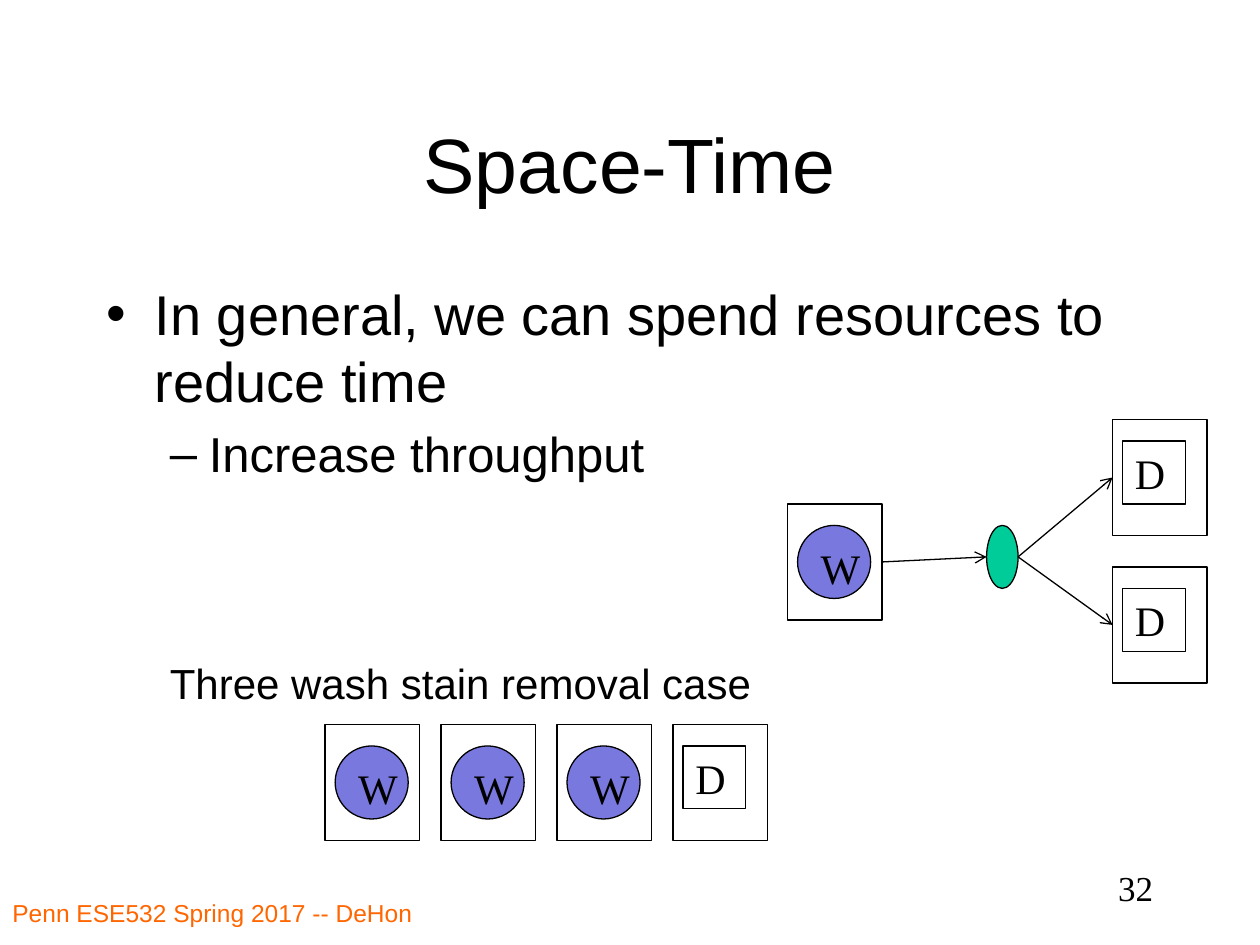
from lxml.etree import SubElement
from pptx import Presentation
from pptx.dml.color import RGBColor
from pptx.enum.shapes import MSO_CONNECTOR as Connector, MSO_SHAPE as Shape
from pptx.enum.text import MSO_ANCHOR as Anchor, PP_ALIGN as Align
from pptx.oxml.ns import qn
from pptx.util import Inches, Pt

BLACK = RGBColor(0x00, 0x00, 0x00)
WHITE = RGBColor(0xFF, 0xFF, 0xFF)
ORANGE = RGBColor(0xFF, 0x66, 0x00)
VIOLET = RGBColor(0x78, 0x78, 0xDE)
GREEN = RGBColor(0x00, 0xCC, 0x99)
SANS = "Arial"
SERIF = "Times New Roman"


def format_paragraph(paragraph, size, font=SANS, color=BLACK, align=Align.LEFT):
    """Set the alignment and the font of every run."""
    paragraph.alignment = align
    for run in paragraph.runs:
        run.font.size = Pt(size)
        run.font.name = font
        run.font.color.rgb = color


def add_title(slide, text):
    """Place and format the title placeholder."""
    title = slide.shapes.title
    title.left, title.top = Inches(0.75), Inches(0.67)
    title.width, title.height = Inches(8.5), Inches(1.25)
    title.text_frame.text = text
    title.text_frame.vertical_anchor = Anchor.MIDDLE
    format_paragraph(title.text_frame.paragraphs[0], 44, align=Align.CENTER)


def add_label(shapes, box, text, size, wrap=True, **style):
    """Add a one-paragraph text box."""
    label = shapes.add_textbox(*map(Inches, box))
    label.text_frame.word_wrap = wrap
    label.text_frame.text = text
    format_paragraph(label.text_frame.paragraphs[0], size, **style)


def add_bullets(slide, box, items):
    """Add a text box of bulleted (text, level, size, mark, margin, indent) items."""
    frame = slide.shapes.add_textbox(*map(Inches, box)).text_frame
    frame.word_wrap = True
    for index, (text, level, size, mark, margin, indent) in enumerate(items):
        paragraph = frame.add_paragraph() if index else frame.paragraphs[0]
        paragraph.text = text
        paragraph.level = level
        if index:
            paragraph.space_before = Pt(size * 0.2)
        properties = paragraph._p.get_or_add_pPr()
        properties.set("marL", str(Inches(margin)))
        properties.set("indent", str(Inches(indent)))
        SubElement(properties, qn("a:buFont")).set("typeface", SANS)
        SubElement(properties, qn("a:buChar")).set("char", mark)
        format_paragraph(paragraph, size)


def add_outlined(shapes, kind, box, fill=WHITE, text=""):
    """Add a black-outlined shape, with a letter where given."""
    shape = shapes.add_shape(kind, *map(Inches, box))
    shape.shadow.inherit = False
    shape.fill.solid()
    shape.fill.fore_color.rgb = fill
    shape.line.color.rgb = BLACK
    shape.line.width = Pt(0.75)
    if text:
        shape.text_frame.text = text
        shape.text_frame.vertical_anchor = Anchor.TOP
        format_paragraph(shape.text_frame.paragraphs[0], 24, font=SERIF)


def add_machine(shapes, letter, left, top):
    """Add a washer (W) or a dryer (D) in its cabinet."""
    add_outlined(shapes, Shape.RECTANGLE, (left, top, 0.75, 0.92))
    kind, size, fill = {
        "W": (Shape.OVAL, 0.58, VIOLET),
        "D": (Shape.RECTANGLE, 0.5, WHITE),
    }[letter]
    add_outlined(shapes, kind, (left + 0.08, top + 0.17, size, size), fill, letter)


def add_arrow(shapes, start, end):
    """Add a thin line with an open arrowhead at its end."""
    arrow = shapes.add_connector(Connector.STRAIGHT, *map(Inches, start + end))
    arrow.line.color.rgb = BLACK
    arrow.line.width = Pt(0.75)
    SubElement(arrow.line._get_or_add_ln(), qn("a:tailEnd")).set("type", "arrow")
    SubElement(arrow._element.spPr, qn("a:effectLst"))


def add_split_diagram(slide):
    """Draw one washer feeding two dryers."""
    shapes = slide.shapes.add_group_shape().shapes
    add_machine(shapes, "W", 6.25, 4)
    for top in (3.33, 4.5):
        add_machine(shapes, "D", 8.83, top)
    add_outlined(shapes, Shape.OVAL, (7.83, 4.17, 0.25, 0.5), GREEN)
    for top in (3.33, 4.5):
        add_arrow(shapes, (8.08, 4.42), (8.83, top + 0.46))
    add_arrow(shapes, (7, 4.46), (7.83, 4.42))


def add_wash_row(slide):
    """Draw the row of three washers and a dryer under its caption."""
    shapes = slide.shapes.add_group_shape().shapes
    for index, letter in enumerate("WWWD"):
        add_machine(shapes, letter, 2.58 + index * 0.92, 5.75)
    add_label(shapes, (1.25, 5.17, 4.86, 0.5), "Three wash stain removal case", 24, wrap=False)


def main():
    """Build and save the slide."""
    presentation = Presentation()
    presentation.slide_width, presentation.slide_height = Inches(10), Inches(7.5)
    slide = presentation.slides.add_slide(presentation.slide_layouts[5])
    add_title(slide, "Space-Time")
    add_bullets(slide, (0.75, 2.17, 8.5, 4.5), [
        ("In general, we can spend resources to reduce time", 0, 32, "•", 0.38, -0.38),
        ("Increase throughput", 1, 28, "–", 0.81, -0.31),
    ])
    add_label(slide.shapes, (0, 7.08, 4.58, 0.42), "Penn ESE532 Spring 2017 -- DeHon", 14, color=ORANGE)
    add_label(slide.shapes, (7.17, 6.83, 2.08, 0.5), "32", 20, font=SERIF, align=Align.RIGHT)
    add_split_diagram(slide)
    add_wash_row(slide)
    presentation.save("out.pptx")


if __name__ == "__main__":
    main()
